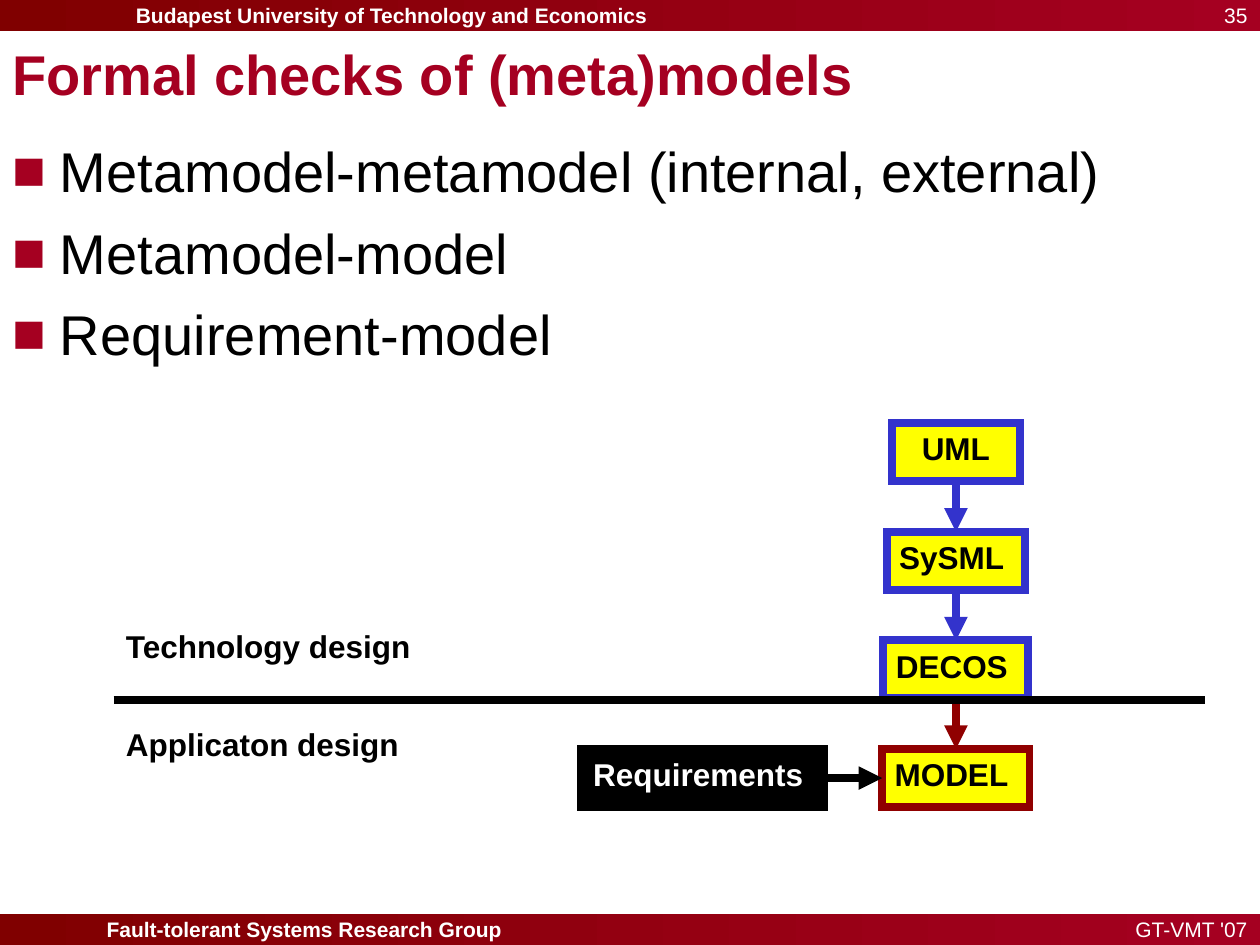
from lxml import etree
from pptx import Presentation
from pptx import util as u
from pptx.dml import color as c
from pptx.enum import shapes as s, text as t
from pptx.oxml import ns

HUES = {"wine": "A50021", "dark": "800000", "white": "FFFFFF", "black": "000000",
        "yellow": "FFFF00", "blue": "3333CC", "red": "900000"}


def rgb(name):
    return c.RGBColor.from_string(HUES[name])


def write(shape, lines, size=18, hue="black", bold=False, align="LEFT",
          anchor="TOP", gap=0, mark=None):
    frame = shape.text_frame
    frame.word_wrap = True
    frame.vertical_anchor = t.MSO_ANCHOR[anchor]
    for i, line in enumerate(lines.split("\n")):
        para = frame.paragraphs[0] if i == 0 else frame.add_paragraph()
        para.alignment = t.PP_ALIGN[align]
        if i:
            para.space_before = u.Pt(gap)
        if mark:
            props = para._p.get_or_add_pPr()
            props.set("marL", str(u.Cm(0.96)))
            props.set("indent", str(-u.Cm(0.96)))
            tint = etree.SubElement(props, ns.qn("a:buClr"))
            etree.SubElement(tint, ns.qn("a:srgbClr"), val=HUES["wine"])
            etree.SubElement(props, ns.qn("a:buFont"), typeface="Arial")
            etree.SubElement(props, ns.qn("a:buChar"), char=mark)
        run = para.add_run()
        run.text = line
        run.font.name = "Arial"
        run.font.size = u.Pt(size)
        run.font.bold = bold
        run.font.color.rgb = rgb(hue)


deck = Presentation()
deck.slide_width, deck.slide_height = u.Cm(25.4), u.Cm(19.05)
slide = deck.slides.add_slide(deck.slide_layouts[6])
items = slide.shapes

# Header and footer bands
BAND = 0.63
FOOT = 19.05 - BAND
for top in (FOOT, 0):
    band = items.add_shape(s.MSO_SHAPE.RECTANGLE, 0, u.Cm(top), u.Cm(25.4), u.Cm(BAND))
    band.shadow.inherit = False
    band.line.fill.background()
    band.fill.gradient()
    band.fill.gradient_angle = 0
    for stop, place, hue in zip(band.fill.gradient_stops, (0, 1), ("dark", "wine")):
        stop.position = place
        stop.color.rgb = rgb(hue)

for words, left, top, width, bold, align in (
        ("Budapest University of Technology and Economics", 2.49, 0, 12.27, True, "LEFT"),
        ("Fault-tolerant Systems Research Group", 1.9, FOOT, 17.4, True, "LEFT"),
        ("35", 22.86, 0, 2.54, False, "RIGHT"),
        ("GT-VMT '07", 17.35, FOOT, 8.05, False, "RIGHT")):
    box = items.add_textbox(u.Cm(left), u.Cm(top), u.Cm(width), u.Cm(BAND))
    write(box, words, size=12, hue="white", bold=bold, align=align, anchor="MIDDLE")

# Title and bullets
title = items.add_textbox(0, u.Cm(0.61), u.Cm(25.4), u.Cm(1.73))
write(title, "Formal checks of (meta)models", size=32, hue="wine", bold=True,
      anchor="MIDDLE")
body = items.add_textbox(0, u.Cm(2.51), u.Cm(25.4), u.Cm(15.47))
body.text_frame.margin_top = u.Cm(0.25)
write(body, "Metamodel-metamodel (internal, external)\nMetamodel-model\nRequirement-model",
      size=32, gap=8, mark="■")

# Boxes: one column at equal steps, requirements beside the last
MID, TOP, STEP, HIGH = 19.27, 8.53, 2.19, 1.17
nodes = {}
for words, mid, row, width, fill, edge, ink, align in (
        ("UML", MID, 0, 2.57, "yellow", "blue", "black", "CENTER"),
        ("SySML", MID, 1, 2.79, "yellow", "blue", "black", "LEFT"),
        ("DECOS", MID, 2, 2.92, "yellow", "blue", "black", "LEFT"),
        ("MODEL", MID, 3, 2.97, "yellow", "red", "black", "LEFT"),
        ("Requirements", 14.16, 3, 4.9, "black", "black", "white", "LEFT")):
    node = items.add_shape(s.MSO_SHAPE.RECTANGLE, u.Cm(mid - width / 2),
                           u.Cm(TOP + row * STEP), u.Cm(width), u.Cm(HIGH))
    node.shadow.inherit = False
    node.fill.solid()
    node.fill.fore_color.rgb = rgb(fill)
    node.line.color.rgb = rgb(edge)
    node.line.width = u.Pt(4.5)
    etree.SubElement(node.line._ln, ns.qn("a:miter"), lim="800000")
    write(node, words, hue=ink, bold=True, align=align)
    nodes[words] = node

# Labels on both sides of the divider
for words, top, width in (("Technology design", 12.52, 6.3),
                          ("Applicaton design", 14.5, 6.02)):
    label = items.add_textbox(u.Cm(2.29), u.Cm(top), u.Cm(width), u.Cm(1.02))
    write(label, words, bold=True)

# Arrows, then the divider on top
for start, end, out, into, hue in (
        ("UML", "SySML", 2, 0, "blue"),
        ("SySML", "DECOS", 2, 0, "blue"),
        ("DECOS", "MODEL", 2, 0, "red"),
        ("Requirements", "MODEL", 3, 1, "black"),
        (None, None, None, None, "black")):
    line = items.add_connector(s.MSO_CONNECTOR.STRAIGHT, u.Cm(2.29), u.Cm(14.12),
                               u.Cm(24.3), u.Cm(14.12))
    line.line.color.rgb = rgb(hue)
    line.line.width = u.Pt(4.5)
    etree.SubElement(line._element.spPr, ns.qn("a:effectLst"))
    if start:
        line.begin_connect(nodes[start], out)
        line.end_connect(nodes[end], into)
        etree.SubElement(line.line._ln, ns.qn("a:tailEnd"), type="triangle")

deck.save("out.pptx")
